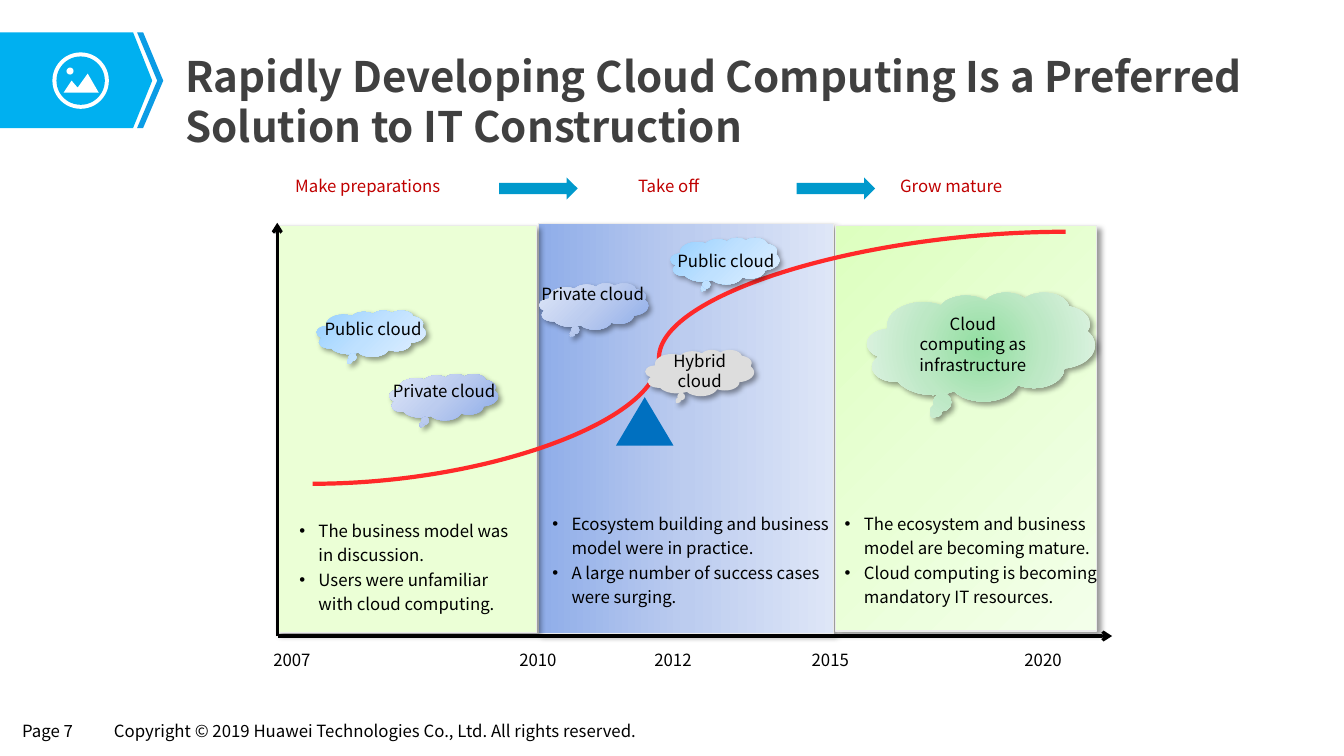
from dataclasses import dataclass, field
from typing import Any, NamedTuple

from lxml.etree import SubElement
from pptx import Presentation
from pptx.dml.color import RGBColor
from pptx.enum.shapes import MSO_CONNECTOR as Link, MSO_SHAPE as Preset
from pptx.enum.text import MSO_ANCHOR as Anchor, PP_ALIGN as Align
from pptx.oxml.ns import qn
from pptx.util import Emu, Inches, Pt

FONT = "Noto Sans CJK SC"
BLACK = RGBColor(0, 0, 0)
WHITE = RGBColor(0xFF, 0xFF, 0xFF)
CHARCOAL = RGBColor(0x40, 0x40, 0x40)
CRIMSON = RGBColor(0xC0, 0, 0)
RED = RGBColor(0xFF, 0x29, 0x29)
SKY = RGBColor(0, 0xB0, 0xF0)
DEEP_SKY = RGBColor(0x0B, 0x9C, 0xE5)
TEAL = RGBColor(0, 0x99, 0xCC)
BLUE = RGBColor(0, 0x70, 0xC0)
SILVER = RGBColor(0xDD, 0xDD, 0xDD)
EDGE = RGBColor(0xEB, 0xEB, 0xEB)
PALE_GREEN = RGBColor(0xEB, 0xFF, 0xD6)

CELL = Inches(0.1)  # the grid: one column or row is a tenth of an inch


class Area(NamedTuple):
    left: float
    top: float
    width: float
    height: float


@dataclass(frozen=True)
class Gradient:
    stops: tuple[str, str, str]
    angle: int | None = 0  # None spreads from the centre


@dataclass(frozen=True)
class Label:
    area: Area
    lines: tuple[str, ...]
    font: dict[str, Any] = field(default_factory=dict)
    para: dict[str, Any] = field(default_factory=dict)
    frame: dict[str, Any] = field(default_factory=dict)
    bullet: bool = False


@dataclass(frozen=True)
class Figure:
    preset: Preset
    area: Area
    fill: RGBColor | Gradient
    edge: RGBColor | None = None
    shadow: bool = False


INDIGO_STOPS = ("8FADE9", "BCCCEF", "DEE6F7")
PUBLIC = Gradient(("96D0FF", "BFE1FF", "E0EFFF"), 45)
PRIVATE = Gradient(INDIGO_STOPS, 225)
MATURE = Gradient(("91DEA0", "BDE8C5", "DFF3E3"), None)
GREEN = Gradient(("DDFFBF", "E9FFD6", "F3FFEA"), 45)

TIGHT = {f"margin_{side}": Inches(0.04) for side in ("left", "top", "right", "bottom")}
FOOTER = {**TIGHT, "margin_left": Inches(0.09), "margin_right": Inches(0.09), "word_wrap": False}
CENTRED = {"alignment": Align.CENTER}


def cells(count: float) -> Emu:
    return Emu(round(count * CELL))


def apply(target: Any, values: dict[str, Any]) -> None:
    for name, value in values.items():
        setattr(target, name, value)


def write(frame: Any, label: Label) -> None:
    apply(frame, {"word_wrap": True, **label.frame})
    for index, line in enumerate(label.lines):
        para = frame.add_paragraph() if index else frame.paragraphs[0]
        if label.bullet:
            props = para._p.get_or_add_pPr()
            props.set("marL", str(Inches(0.19)))
            props.set("indent", str(-Inches(0.19)))
            SubElement(props, qn("a:buFont"), typeface="Arial")
            SubElement(props, qn("a:buChar"), char="•")
        apply(para, label.para)
        span = para.add_run()
        span.text = line
        font = {"name": FONT, "size": Pt(12), "color": BLACK, **label.font}
        span.font.color.rgb = font.pop("color")
        apply(span.font, font)


def add_label(page: Any, label: Label) -> None:
    box = page.shapes.add_textbox(*map(cells, label.area))
    write(box.text_frame, label)


def paint(shape: Any, fill: RGBColor | Gradient, edge: RGBColor | None = None) -> None:
    shape.shadow.inherit = False
    if isinstance(fill, Gradient):
        shape.fill.gradient()
        grad = shape._element.spPr.find(qn("a:gradFill"))
        for child in list(grad):
            grad.remove(child)
        stops = SubElement(grad, qn("a:gsLst"))
        for index, colour in enumerate(fill.stops):
            stop = SubElement(stops, qn("a:gs"), pos=str(index * 50000))
            SubElement(stop, qn("a:srgbClr"), val=colour)
        if fill.angle is None:
            spread = SubElement(grad, qn("a:path"), {"path": "circle"})
            SubElement(spread, qn("a:fillToRect"), dict.fromkeys("ltrb", "50000"))
        else:
            SubElement(grad, qn("a:lin"), ang=str(fill.angle * 60000), scaled="0")
    else:
        shape.fill.solid()
        shape.fill.fore_color.rgb = fill
    if edge is None:
        shape.line.fill.background()
    else:
        shape.line.color.rgb = edge
        shape.line.width = Pt(0.75)


def add_figure(page: Any, figure: Figure) -> Any:
    shape = page.shapes.add_shape(figure.preset, *map(cells, figure.area))
    paint(shape, figure.fill, figure.edge)
    if figure.shadow:
        effects = shape._element.spPr.find(qn("a:effectLst"))
        cast = SubElement(effects, qn("a:outerShdw"), blurRad=str(Pt(4)), dist=str(Pt(3)),
                          dir="2700000", algn="tl", rotWithShape="0")
        tone = SubElement(cast, qn("a:srgbClr"), val="000000")
        SubElement(tone, qn("a:alpha"), val="40000")
    return shape


def add_outline(page: Any, points: list[tuple[float, float]], fill: RGBColor) -> None:
    corners = [(cells(x), cells(y)) for x, y in points]
    builder = page.shapes.build_freeform(*corners[0])
    builder.add_line_segments(corners[1:])
    paint(builder.convert_to_shape(), fill)


def add_line(page: Any, kind: Link, ends: tuple[float, ...], colour: RGBColor, width: float) -> Any:
    line = page.shapes.add_connector(kind, *map(cells, ends))
    line.line.color.rgb = colour
    line.line.width = Pt(width)
    SubElement(line._element.spPr, qn("a:effectLst"))
    return line


def cloud(left: float, top: float, fill: RGBColor | Gradient) -> Figure:
    return Figure(Preset.CLOUD_CALLOUT, Area(left, top, 10.8, 4.6), fill, shadow=True)


def panel(area: Area, fill: RGBColor | Gradient) -> Figure:
    return Figure(Preset.RECTANGLE, area, fill, EDGE, True)


def main() -> None:
    deck = Presentation()
    apply(deck, {"slide_width": Inches(13.33), "slide_height": Inches(7.5)})
    page = deck.slides.add_slide(deck.slide_layouts[6])

    # Banner with the picture icon
    add_outline(page, [(13.2, 12.7), (0, 12.7), (0, 3.2), (13.2, 3.2), (15.1, 8)], SKY)
    add_outline(page, [(14.2, 3.2), (13.6, 3.2), (15.6, 8), (13.6, 12.7), (14.2, 12.7), (16.2, 8)], DEEP_SKY)
    for area, fill in ((Area(5.2, 5.2, 5.6, 5.6), WHITE), (Area(5.6, 5.6, 4.8, 4.8), SKY),
                       (Area(6.6, 6.7, 0.7, 0.7), WHITE)):
        add_figure(page, Figure(Preset.OVAL, area, fill))
    add_outline(page, [(6.3, 9.2), (7.1, 8), (7.7, 8.7), (8.7, 7.3), (9.8, 9.2)], WHITE)

    # Period panels
    for area, fill in ((Area(53.4, 22.2, 29.3, 40.7), Gradient(INDIGO_STOPS)),
                       (Area(82.9, 22.4, 25.9, 40.2), GREEN),
                       (Area(27.4, 22.4, 25.8, 40.4), PALE_GREEN)):
        add_figure(page, panel(area, fill))

    # Growth curve and axes
    curve = add_line(page, Link.CURVE, (31, 48, 105.7, 23), RED, 3)
    guides = curve._element.spPr.find(qn("a:prstGeom")).find(qn("a:avLst"))
    SubElement(guides, qn("a:gd"), name="adj1", fmla="val 46000")
    for ends in ((27.5, 63.1, 27.5, 22.1), (27.6, 63.1, 110.3, 63.1)):
        axis = add_line(page, Link.STRAIGHT, ends, BLACK, 2.25)
        SubElement(axis.line._get_or_add_ln(), qn("a:tailEnd"), type="arrow")

    # Clouds, turning point and stage arrows
    for left, top, fill in ((31.4, 30.8, PUBLIC), (38.6, 37.1, PRIVATE), (53.5, 28.1, PRIVATE),
                            (66.5, 23.6, PUBLIC), (64, 34.7, SILVER)):
        add_figure(page, cloud(left, top, fill))
    big_area = Area(86, 29, 22.6, 10.8)
    big = add_figure(page, Figure(Preset.CLOUD_CALLOUT, big_area, MATURE, shadow=True))
    write(big.text_frame, Label(big_area, ("Cloud computing as infrastructure",), para=CENTRED,
                                frame={"vertical_anchor": Anchor.MIDDLE}))
    add_figure(page, Figure(Preset.ISOSCELES_TRIANGLE, Area(61.1, 39.4, 5.7, 4.8), BLUE))
    for left in (49.5, 79):
        add_figure(page, Figure(Preset.RIGHT_ARROW, Area(left, 17.6, 7.8, 2.2), TEAL))

    # Title, footer, stages, cloud names, years and remarks
    labels = [
        Label(Area(17.4, 4.5, 107.5, 11.2),
              ("Rapidly Developing Cloud Computing Is a Preferred Solution to IT Construction",),
              {"size": Pt(30), "bold": True, "color": CHARCOAL}),
        Label(Area(1.3, 71.1, 7.7, 2.9), ("Page 7",), frame=FOOTER),
        Label(Area(10.4, 71.1, 56.6, 2.9),
              ("Copyright © 2019 Huawei Technologies Co., Ltd. All rights reserved.",), frame=FOOTER),
    ]
    for left, width, name in ((28.3, 22.3, "Make preparations"), (62.3, 13.5, "Take off"),
                              (88.3, 16.2, "Grow mature")):
        labels.append(Label(Area(left, 16.9, width, 3), (name,), {"color": CRIMSON}))
    captions = [(31.6, 31.2, 10.8, "Public cloud"), (53.3, 27.7, 11, "Private cloud"),
                (38.3, 37.4, 11.5, "Private cloud"), (64, 34.4, 10.8, "Hybrid cloud"),
                (66.6, 24.5, 10.8, "Public cloud")]
    years = zip((22.2, 46.6, 60, 75.6, 96.7), ("2007", "2010", "2012", "2015", "2020"))
    captions += [(left, 64.1, 13.5, year) for left, year in years]
    for left, top, width, name in captions:
        labels.append(Label(Area(left, top, width, 2.8), (name,), para=CENTRED, frame=TIGHT))
    for area, lines in (
        (Area(28.7, 50.8, 23.2, 10.7), ("The business model was in discussion.",
                                        "Users were unfamiliar with cloud computing.")),
        (Area(53.8, 50.1, 30.5, 10.7), ("Ecosystem building and business model were in practice.",
                                        "A large number of success cases were surging.")),
        (Area(82.8, 50.1, 27.6, 13.1), ("The ecosystem and business model are becoming mature.",
                                        "Cloud computing is becoming mandatory IT resources.")),
    ):
        labels.append(Label(area, lines, para={"line_spacing": 1.2}, bullet=True))
    for label in labels:
        add_label(page, label)

    deck.save("out.pptx")


if __name__ == "__main__":
    main()
